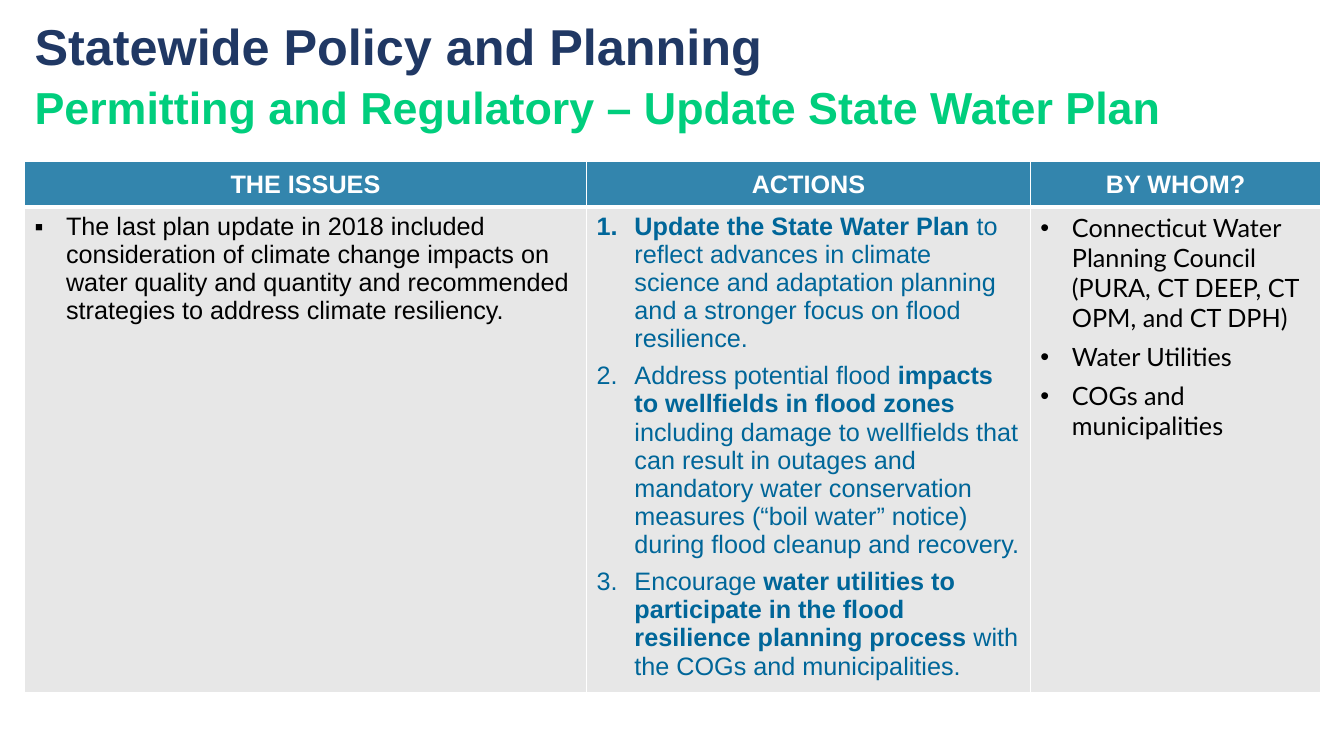
from copy import deepcopy

from lxml import etree
from pptx import Presentation
from pptx.dml.color import RGBColor
from pptx.enum.text import MSO_ANCHOR, MSO_AUTO_SIZE, PP_ALIGN
from pptx.oxml.ns import qn
from pptx.util import Pt

LEFT, CENTER = PP_ALIGN.LEFT, PP_ALIGN.CENTER
TOP, MIDDLE = MSO_ANCHOR.TOP, MSO_ANCHOR.MIDDLE
NO_AUTOFIT = MSO_AUTO_SIZE.NONE


class Theme:
    navy, green, blue = "203864", "00CE7D", "006699"
    header_fill, body_fill = "3385AD", "E7E7E7"
    white, black = "FFFFFF", "000000"
    font, partner_font = "Arial", "Lato"
    title_size, subtitle_size, table_size = 36, 32, 18


def write(para, text, size=Theme.table_size, color=Theme.black, bold=False,
          font=Theme.font):
    span = para.add_run()
    span.text = text
    span.font.size = Pt(size)
    span.font.bold = bold
    span.font.name = font
    span.font.color.rgb = RGBColor.from_string(color)
    return span


def style_cell(cell, fill, anchor, top, bottom):
    """Fill the cell and give it white borders; top and bottom are widths in points."""
    cell.vertical_anchor = anchor
    cell.fill.solid()
    cell.fill.fore_color.rgb = RGBColor.from_string(fill)
    properties = cell._tc.get_or_add_tcPr()
    borders = {"a:lnL": 1, "a:lnR": 1, "a:lnT": top, "a:lnB": bottom}
    for position, (tag, width) in enumerate(borders.items()):
        line = etree.Element(qn(tag), w=str(Pt(width)))
        solid = etree.SubElement(line, qn("a:solidFill"))
        etree.SubElement(solid, qn("a:srgbClr"), val=Theme.white)
        properties.insert(position, line)


deck = Presentation()
deck.slide_width, deck.slide_height = Pt(960), Pt(540)
page = deck.slides.add_slide(deck.slide_layouts[5])

# Title
title = page.shapes.title
title.left, title.top, title.width, title.height = Pt(17.5), Pt(30), Pt(926), Pt(42.5)
title.text_frame.auto_size = NO_AUTOFIT
title.text_frame.word_wrap = True
title.text_frame.vertical_anchor = MIDDLE
para = title.text_frame.paragraphs[0]
para.alignment = LEFT
para.line_spacing = 1.08
heading = write(para, "Statewide Policy and Planning", size=Theme.title_size,
                color=Theme.navy, bold=True)
para.add_line_break()
para._p[-1].append(deepcopy(heading._r.rPr))
write(para, "Permitting and Regulatory – Update State Water Plan",
      size=Theme.subtitle_size, color=Theme.green, bold=True)

# Each column: heading, width, indent, bullet, text format, items made of (text, bold) spans
columns = [
    ("THE ISSUES", 401.5, 22.5, "▪", {}, [
        [("The last plan update in 2018 included consideration of climate change "
          "impacts on water quality and quantity and recommended strategies to "
          "address climate resiliency.", False)],
    ]),
    ("ACTIONS", 317, 27, None, {"color": Theme.blue}, [
        [("Update the State Water Plan ", True),
         ("to reflect advances in climate science and adaptation planning and a "
          "stronger focus on flood resilience.", False)],
        [("Address potential flood ", False),
         ("impacts to wellfields in flood zones ", True),
         ("including damage to wellfields that can result in outages and mandatory "
          "water conservation measures (“boil water” notice) during flood cleanup "
          "and recovery.", False)],
        [("Encourage ", False),
         ("water utilities to participate in the flood resilience planning process ",
          True),
         ("with the COGs and municipalities.", False)],
    ]),
    ("BY WHOM?", 207.5, 22.5, "•", {"font": Theme.partner_font}, [
        [("Connecticut Water Planning Council (PURA, CT DEEP, CT OPM, and CT DPH)",
          False)],
        [("Water Utilities", False)],
        [("COGs and municipalities", False)],
    ]),
]

# Table
table = page.shapes.add_table(2, len(columns), Pt(17.5), Pt(115.5),
                              Pt(926), Pt(379.5)).table
table.rows[0].height, table.rows[1].height = Pt(32.5), Pt(347)

for index, (name, width, indent, bullet, text_format, items) in enumerate(columns):
    table.columns[index].width = Pt(width)

    header = table.cell(0, index)
    style_cell(header, Theme.header_fill, MIDDLE, top=1, bottom=3)
    para = header.text_frame.paragraphs[0]
    para.alignment = CENTER
    write(para, name, color=Theme.white, bold=True)

    body = table.cell(1, index)
    style_cell(body, Theme.body_fill, TOP, top=3, bottom=1)
    for number, spans in enumerate(items):
        frame = body.text_frame
        para = frame.add_paragraph() if number else frame.paragraphs[0]
        para.space_after = Pt(6)
        properties = para._p.get_or_add_pPr()
        properties.set("marL", str(Pt(indent)))
        properties.set("indent", str(-Pt(indent)))
        if bullet:
            etree.SubElement(properties, qn("a:buFont"), typeface=Theme.font)
            etree.SubElement(properties, qn("a:buChar"), char=bullet)
        else:
            etree.SubElement(properties, qn("a:buFont"), typeface=Theme.font)
            etree.SubElement(properties, qn("a:buAutoNum"), type="arabicPeriod")
        for text, bold in spans:
            write(para, text, bold=bold, **text_format)

deck.save("out.pptx")
